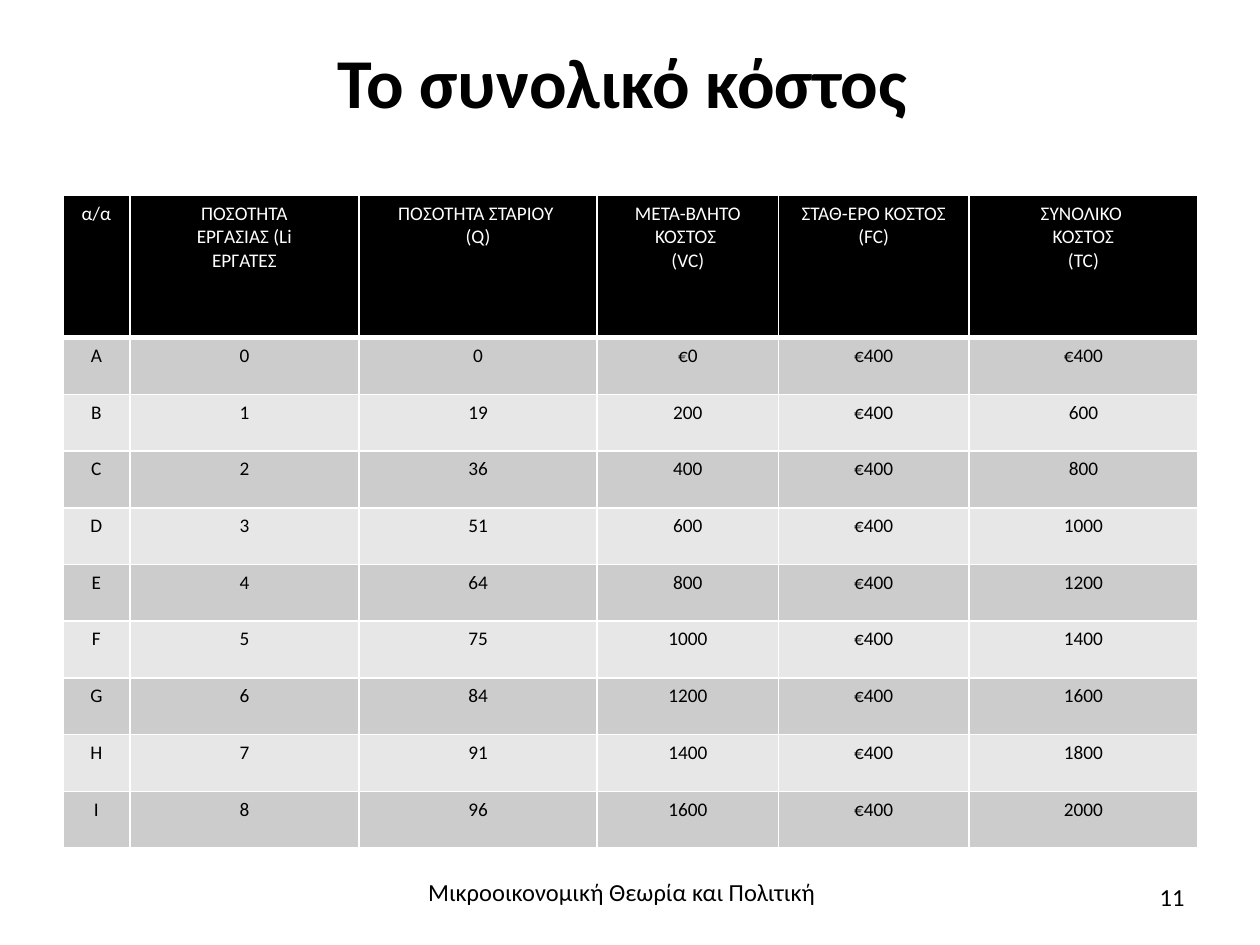
import pptx
import pptx.dml.color
import pptx.enum.text
import pptx.oxml
import pptx.oxml.ns
import pptx.util

INCH = pptx.util.Inches
WHITE, BLACK = "FFFFFF", "000000"
BANDS = ["CCCCCC", "E7E7E7"]


def write(frame, text, size=14, color=BLACK, bold=False, align="CENTER"):
    """Fill a text frame, one paragraph for each line of text."""
    frame.word_wrap = True
    for index, line in enumerate(text.split("\n")):
        paragraph = frame.add_paragraph() if index else frame.paragraphs[0]
        paragraph.alignment = getattr(pptx.enum.text.PP_ALIGN, align)
        run = paragraph.add_run()
        run.text = line
        run.font.name = "Calibri"
        run.font.size = pptx.util.Pt(size)
        run.font.bold = bold
        run.font.color.rgb = pptx.dml.color.RGBColor.from_string(color)


def paint(cell, fill, bottom):
    """Give a cell white borders, with the bottom one in points, and a fill."""
    properties = cell._tc.get_or_add_tcPr()
    for side, points in zip("LRTB", (1, 1, 1, bottom)):
        properties.append(pptx.oxml.parse_xml(
            f'<a:ln{side} {pptx.oxml.ns.nsdecls("a")} w="{pptx.util.Pt(points)}">'
            f'<a:solidFill><a:srgbClr val="{WHITE}"/></a:solidFill></a:ln{side}>'))
    cell.fill.solid()
    cell.fill.fore_color.rgb = pptx.dml.color.RGBColor.from_string(fill)


deck = pptx.Presentation()
deck.slide_width, deck.slide_height = INCH(10), INCH(7.5)
slide = deck.slides.add_slide(deck.slide_layouts[5])

heading = slide.shapes.title
heading.left, heading.top, heading.width, heading.height = map(INCH, (0.5, 0.13, 9, 1.02))
heading.text_frame.vertical_anchor = pptx.enum.text.MSO_ANCHOR.MIDDLE
write(heading.text_frame, "Το συνολικό κόστος ", size=40, bold=True)

course = slide.shapes.add_textbox(*map(INCH, (2.61, 6.91, 4.65, 0.55)))
write(course.text_frame, "Μικροοικονομική Θεωρία και Πολιτική")
page = slide.shapes.add_textbox(*map(INCH, (7.17, 6.95, 2.33, 0.4)))
write(page.text_frame, "11", align="RIGHT")

# Each worker adds 200 to the variable cost; the fixed cost stays at 400.
fixed_cost, wage = 400, 200
wheat = [0, 19, 36, 51, 64, 75, 84, 91, 96]
rows = [["α/α", "ΠΟΣΟΤΗΤΑ\nΕΡΓΑΣΙΑΣ (Li\nΕΡΓΑΤΕΣ", "ΠΟΣΟΤΗΤΑ ΣΤΑΡΙΟΥ \n(Q)",
         "ΜΕΤΑ-ΒΛΗΤΟ ΚΟΣΤΟΣ \n(VC)", "ΣΤΑΘ-ΕΡΟ ΚΟΣΤΟΣ\n(FC)",
         "ΣΥΝΟΛΙΚΟ \nΚΟΣΤΟΣ\n(TC)"]]
for workers, (letter, quantity) in enumerate(zip("ΑΒCDEFGHI", wheat)):
    euro = "" if workers else "€"
    variable_cost = wage * workers
    rows.append([letter, str(workers), str(quantity), f"{euro}{variable_cost}",
                 f"€{fixed_cost}", f"{euro}{fixed_cost + variable_cost}"])

column_widths = [0.53, 1.82, 1.89, 1.44, 1.51, 1.82]
costs = slide.shapes.add_table(len(rows), len(column_widths),
                               *map(INCH, (0.5, 1.55, 9, 5.2))).table
for column, width in zip(costs.columns, column_widths):
    column.width = INCH(width)
for r, values in enumerate(rows):
    header = r == 0
    costs.rows[r].height = INCH(1.13 if header else 0.45)
    for c, value in enumerate(values):
        cell = costs.cell(r, c)
        paint(cell, BLACK if header else BANDS[(r - 1) % 2], bottom=3 if header else 1)
        write(cell.text_frame, value, size=11, color=WHITE if header else BLACK)

deck.save("out.pptx")
